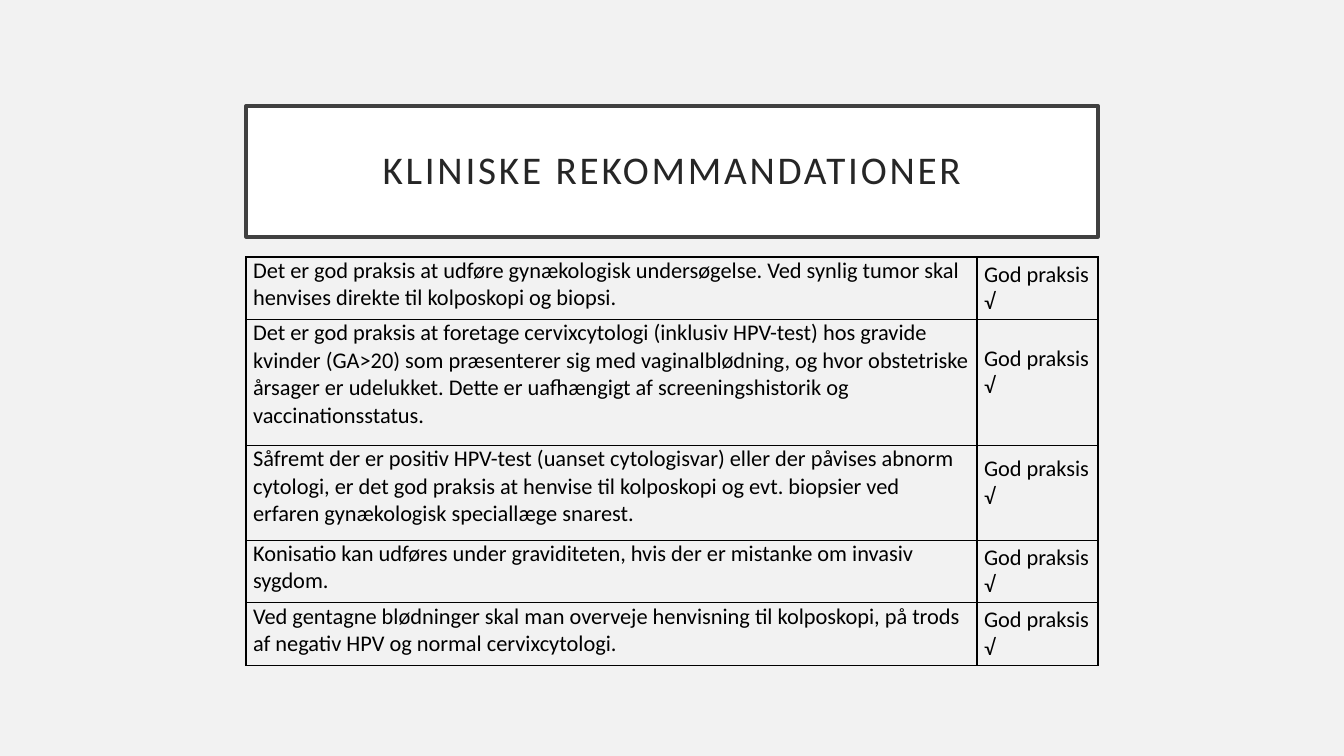
from lxml import etree
from pptx import Presentation
from pptx import util as u
from pptx.dml.color import RGBColor
from pptx.enum import shapes, text
from pptx.oxml.ns import qn

MARK = "God praksis √"
# Advice, row height, space kept below the mark
ROWS = [
    ("Det er god praksis at udføre gynækologisk undersøgelse. Ved synlig tumor "
     "skal henvises direkte til kolposkopi og biopsi.", 0.62, 0),
    ("Det er god praksis at foretage cervixcytologi (inklusiv HPV-test) hos "
     "gravide kvinder (GA>20) som præsenterer sig med vaginalblødning, og hvor "
     "obstetriske årsager er udelukket. Dette er uafhængigt af "
     "screeningshistorik og vaccinationsstatus.", 1.25, 0.2),
    ("Såfremt der er positiv HPV-test (uanset cytologisvar) eller der påvises "
     "abnorm cytologi, er det god praksis at henvise til kolposkopi og evt. "
     "biopsier ved erfaren gynækologisk speciallæge snarest.", 0.94, 0.2),
    ("Konisatio kan udføres under graviditeten, hvis der er mistanke om invasiv "
     "sygdom.", 0.62, 0),
    ("Ved gentagne blødninger skal man overveje henvisning til kolposkopi, på "
     "trods af negativ HPV og normal cervixcytologi.", 0.62, 0),
]


def hue(code):
    return RGBColor.from_string(code)


def write(frame, words, size=16, color="000000", align=text.PP_ALIGN.LEFT,
          lead=1.0, track=0):
    par = frame.paragraphs[0]
    par.alignment = align
    par.line_spacing = lead
    run = par.add_run()
    run.text = words
    run.font.name = "Calibri"
    run.font.size = u.Pt(size)
    run.font.color.rgb = hue(color)
    if track:
        run.font._element.set("spc", str(track * 100))


def pad(part, left, top, right, bottom):
    part.margin_left, part.margin_top = u.Inches(left), u.Inches(top)
    part.margin_right, part.margin_bottom = u.Inches(right), u.Inches(bottom)


def edge(cell, color="000000", width=1):
    props = cell._tc.get_or_add_tcPr()
    for side in ("lnL", "lnR", "lnT", "lnB"):
        line = etree.SubElement(props, qn("a:" + side), w=str(u.Pt(width)))
        fill = etree.SubElement(line, qn("a:solidFill"))
        etree.SubElement(fill, qn("a:srgbClr"), val=color)


def title(slide, x, y, w, h):
    box = slide.shapes.add_shape(shapes.MSO_SHAPE.RECTANGLE, u.Inches(x),
                                 u.Inches(y), u.Inches(w), u.Inches(h))
    box.shadow.inherit = False
    box.fill.solid()
    box.fill.fore_color.rgb = hue("FFFFFF")
    box.line.color.rgb = hue("404040")
    box.line.width = u.Pt(2.5)
    frame = box.text_frame
    frame.word_wrap = True
    frame.vertical_anchor = text.MSO_ANCHOR.MIDDLE
    pad(frame, 0.2, 0.2, 0.2, 0.2)
    write(frame, "KLINISKE REKOMMANDATIONER", size=28, color="262626",
          align=text.PP_ALIGN.CENTER, lead=0.9, track=2)


def advice(slide, x, y, w, side=1.2):
    high = sum(row[1] for row in ROWS)
    grid = slide.shapes.add_table(len(ROWS), 2, u.Inches(x), u.Inches(y),
                                  u.Inches(w), u.Inches(high)).table
    grid.first_row = grid.horz_banding = False
    grid.columns[0].width = u.Inches(w - side)
    grid.columns[1].width = u.Inches(side)
    for row, (words, tall, below) in zip(grid.rows, ROWS):
        row.height = u.Inches(tall)
        for cell, body, foot in zip(row.cells, (words, MARK), (0, below)):
            edge(cell)
            cell.fill.background()
            pad(cell, 0.07, 0, 0.07, foot)
            write(cell.text_frame, body)
        row.cells[1].vertical_anchor = text.MSO_ANCHOR.MIDDLE


def main():
    deck = Presentation()
    deck.slide_width, deck.slide_height = u.Inches(13.33), u.Inches(7.5)
    slide = deck.slides.add_slide(deck.slide_layouts[6])
    back = slide.background.fill
    back.solid()
    back.fore_color.rgb = hue("F2F2F2")

    # Title above, table of advice below, on the same margins
    left, wide = 2.44, 8.45
    title(slide, left, 1.05, wide, 1.3)
    advice(slide, left, 2.55, wide)
    deck.save("out.pptx")


if __name__ == "__main__":
    main()
